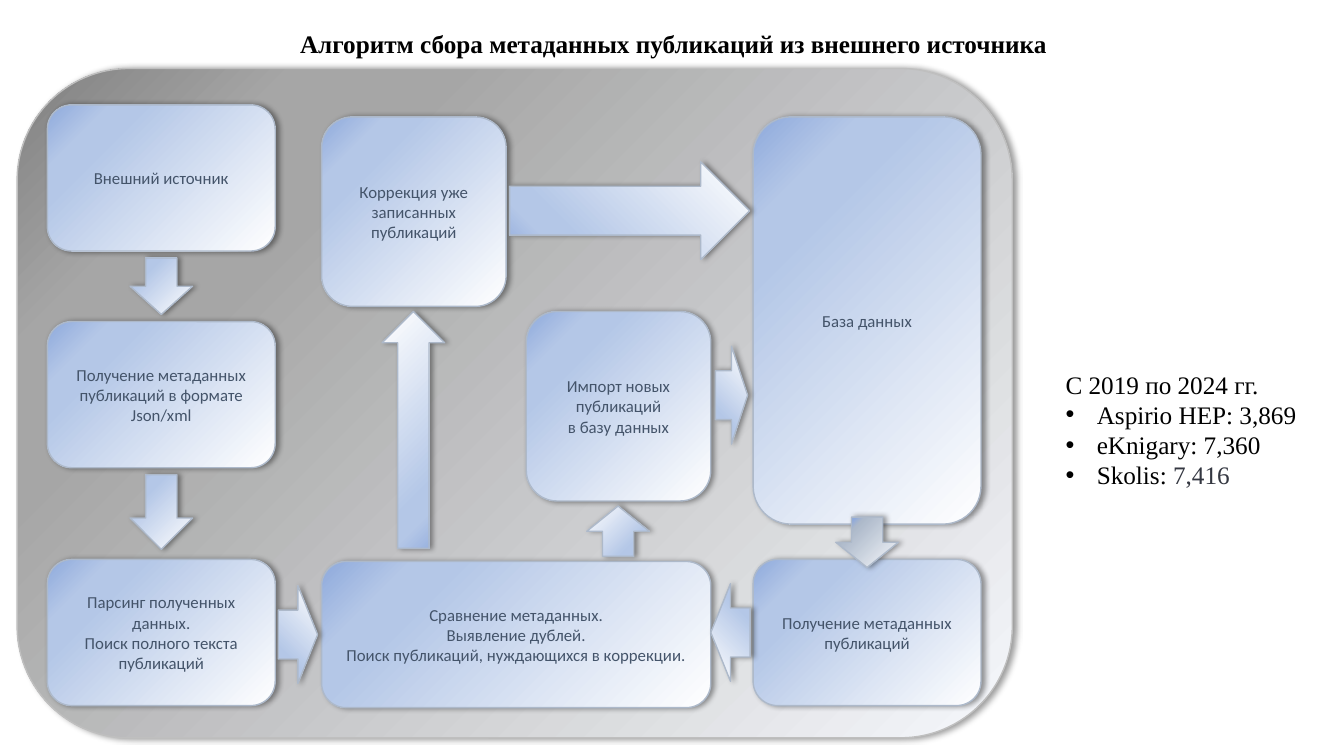
from pptx import Presentation
from pptx.dml.color import RGBColor as Rgb
from pptx.enum.shapes import MSO_SHAPE as Shape
from pptx.enum.text import MSO_ANCHOR as Anchor, MSO_AUTO_SIZE as Fit, PP_ALIGN as Align
from pptx.oxml import parse_xml
from pptx.oxml.ns import nsdecls, qn
from pptx.util import Inches, Pt
from lxml.etree import SubElement

BLACK = Rgb(0x00, 0x00, 0x00)
WHITE = Rgb(0xFF, 0xFF, 0xFF)
PALE = Rgb(0xF6, 0xF8, 0xFC)
SKY = Rgb(0xB4, 0xC7, 0xE7)
BLUE = Rgb(0x8F, 0xAA, 0xDC)
STEEL = Rgb(0xAD, 0xB9, 0xCA)
SLATE = Rgb(0x44, 0x54, 0x6A)
SILVER = Rgb(0xBF, 0xBF, 0xBF)
GRAY = Rgb(0xA6, 0xA6, 0xA6)
DARK = Rgb(0x80, 0x80, 0x80)
INK = Rgb(0x34, 0x37, 0x41)

PANEL = (PALE, GRAY, GRAY, DARK)
GLOSS = (WHITE, SKY, SKY, BLUE)
DIM = (PALE, STEEL, BLUE, BLUE)
STOPS = (0, 74, 83, 100)


class Board:
    serif = "Times New Roman"
    sans = "Calibri"

    def __init__(self, deck):
        self.slide = deck.slides.add_slide(deck.slide_layouts[5])
        self.group = self.slide.shapes.add_group_shape()

    def font(self, run, name, size, color, bold=False):
        font = run.font
        font.name, font.size, font.bold = name, Pt(size), bold
        font.color.rgb = color

    def title(self, text, *area):
        head = self.slide.shapes.title
        head.left, head.top, head.width, head.height = map(Inches, area)
        frame = head.text_frame
        frame.text = text
        frame.vertical_anchor = Anchor.MIDDLE
        para = frame.paragraphs[0]
        para.alignment, para.line_spacing = Align.CENTER, 0.9
        self.font(para.runs[0], self.serif, 18, BLACK, True)

    def form(self, kind, area, tones=GLOSS, edge=STEEL, drop=2):
        item = self.group.shapes.add_shape(kind, *map(Inches, area))
        item.line.color.rgb = edge
        item.line.width = Pt(1)
        item.fill.gradient()
        grad = item.fill._xPr.find(qn("a:gradFill"))
        stops = "".join(
            f'<a:gs pos="{pos * 1000}"><a:srgbClr val="{tone}"/></a:gs>'
            for pos, tone in zip(STOPS, tones))
        grad.getparent().replace(grad, parse_xml(
            f'<a:gradFill {nsdecls("a")} rotWithShape="1"><a:gsLst>{stops}</a:gsLst>'
            '<a:lin ang="13500000" scaled="0"/></a:gradFill>'))
        item.shadow.inherit = False
        glow = item._element.spPr.find(qn("a:effectLst"))
        glow.append(parse_xml(
            f'<a:outerShdw {nsdecls("a")} blurRad="{Pt(4)}" dist="{Pt(drop)}" dir="0" '
            'algn="l" rotWithShape="0"><a:srgbClr val="000000">'
            '<a:alpha val="40000"/></a:srgbClr></a:outerShdw>'))
        return item

    def panel(self, *area):
        self.form(Shape.ROUNDED_RECTANGLE, area, PANEL, SILVER, 3)

    def box(self, text, *area):
        frame = self.form(Shape.ROUNDED_RECTANGLE, area).text_frame
        frame.text = text
        frame.word_wrap = True
        frame.vertical_anchor = Anchor.MIDDLE
        for para in frame.paragraphs:
            para.alignment = Align.CENTER
            self.font(para.runs[0], self.sans, 12, SLATE)

    def arrow(self, turn, *area, tones=GLOSS):
        self.form(Shape.DOWN_ARROW, area, tones).rotation = turn

    def note(self, head, rows, *area):
        frame = self.slide.shapes.add_textbox(*map(Inches, area)).text_frame
        frame.word_wrap = True
        frame.auto_size = Fit.SHAPE_TO_FIT_TEXT
        frame.text = head
        self.font(frame.paragraphs[0].runs[0], self.serif, 18, BLACK)
        for name, count, color in rows:
            para = frame.add_paragraph()
            for text, tone in ((f"{name}: ", BLACK), (count, color)):
                run = para.add_run()
                run.text = text
                self.font(run, self.serif, 18, tone)
            props = para._p.get_or_add_pPr()
            props.set("marL", str(Inches(0.31)))
            props.set("indent", str(-Inches(0.31)))
            SubElement(props, qn("a:buFont")).set("typeface", "Arial")
            SubElement(props, qn("a:buChar")).set("char", "•")


def main():
    deck = Presentation()
    deck.slide_width, deck.slide_height = Inches(13.33), Inches(7.5)
    board = Board(deck)
    board.title("Алгоритм сбора метаданных публикаций из внешнего источника",
                0.93, 0.09, 11.5, 0.71)
    board.panel(0.17, 0.68, 9.87, 6.64)

    left, mid, right = 0.47, 3.19, 7.47
    wide, slim, low, tall = 2.26, 1.83, 1.45, 1.88
    for text, *area in (
        ("Внешний источник", left, 1.04, wide, low),
        ("База данных", right, 1.16, wide, 4.04),
        ("Получение метаданных\nпубликаций в формате\nJson/xml", left, 3.19, wide, low),
        ("Парсинг полученных данных.\nПоиск полного текста публикаций",
         left, 5.55, wide, low),
        ("Получение метаданных\nпубликаций", right, 5.55, wide, low),
        ("Сравнение метаданных.\nВыявление дублей.\n"
         "Поиск публикаций, нуждающихся в коррекции.", mid, 5.57, 3.86, low),
        ("Импорт новых публикаций\nв базу данных", 5.22, 3.09, slim, tall),
        ("Коррекция уже записанных\nпубликаций", mid, 1.16, slim, tall),
    ):
        board.box(text, *area)

    thin, broad = 0.62, 0.97
    for turn, *area in (
        (0, 1.29, 2.56, thin, 0.56),
        (0, 1.29, 4.71, thin, 0.74),
        (270, 2.47, 6.1, broad, 0.39),
        (90, 6.76, 6.08, broad, 0.39),
        (180, 5.82, 5.02, thin, 0.5),
        (180, 3.79, 3.09, thin, 2.35),
        (270, 5.76, 0.9, broad, 2.38),
        (270, 6.77, 3.76, broad, 0.32),
    ):
        board.arrow(turn, *area)
    board.arrow(0, 8.29, 5.13, thin, 0.5, tones=DIM)

    board.note("С 2019 по 2024 гг.", (
        ("Aspirio HEP", "3,869", BLACK),
        ("eKnigary", "7,360", BLACK),
        ("Skolis", "7,416", INK),
    ), 10.47, 3.61, 2.66, 1.31)
    deck.save("out.pptx")


if __name__ == "__main__":
    main()
